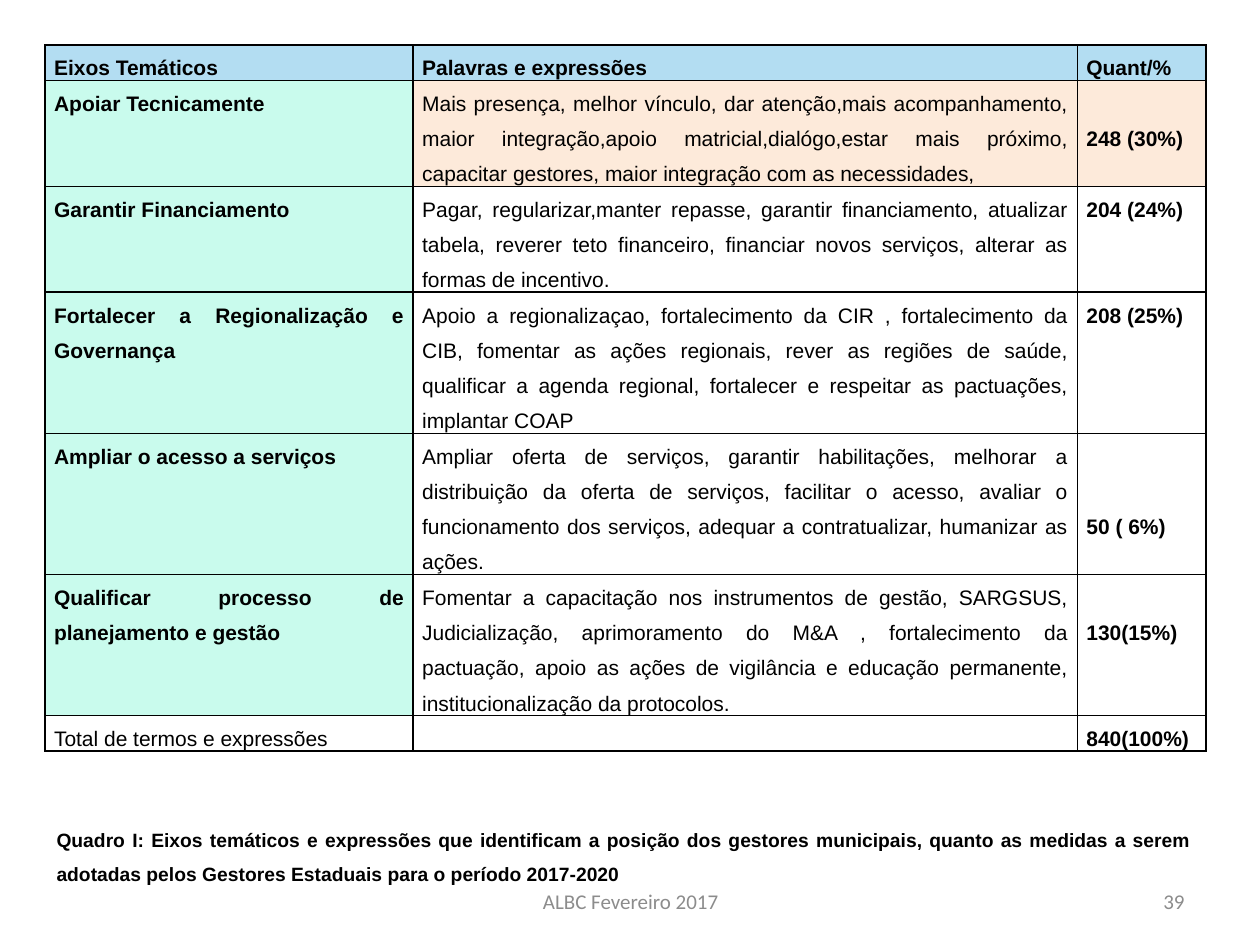
from lxml.etree import SubElement
from pptx import Presentation
from pptx.dml.color import RGBColor as RGB
from pptx.enum.text import MSO_ANCHOR as Anchor, MSO_AUTO_SIZE as Auto, PP_ALIGN as Align
from pptx.oxml import parse_xml
from pptx.oxml.ns import nsdecls
from pptx.util import Cm, Pt

BLACK = RGB(0x00, 0x00, 0x00)
GREY = RGB(0x8C, 0x8C, 0x8C)
BLUE = RGB(0xB3, 0xDD, 0xF2)
MINT = RGB(0xC9, 0xFB, 0xED)
PEACH = RGB(0xFD, 0xEA, 0xDA)

HEAD = ("Eixos Temáticos", "Palavras e expressões", "Quant/%")
# axis, expressions, count, lines in the row, lines above the count
AXES = [
    ("Apoiar Tecnicamente",
     "Mais presença, melhor vínculo, dar atenção,mais acompanhamento, maior "
     "integração,apoio matricial,dialógo,estar mais próximo, capacitar gestores, "
     "maior integração com as necessidades,", "248 (30%)", 3, 1),
    ("Garantir Financiamento",
     "Pagar, regularizar,manter repasse, garantir financiamento, atualizar tabela, "
     "reverer teto financeiro, financiar novos serviços, alterar as formas de "
     "incentivo.", "204 (24%)", 3, 0),
    ("Fortalecer a Regionalização e Governança",
     "Apoio a regionalizaçao, fortalecimento da CIR , fortalecimento da CIB, "
     "fomentar as ações regionais, rever as regiões de saúde, qualificar a agenda "
     "regional, fortalecer e respeitar as pactuações, implantar COAP",
     "208 (25%)", 4, 0),
    ("Ampliar o acesso a serviços",
     "Ampliar oferta de serviços, garantir habilitações, melhorar a distribuição da "
     "oferta de serviços, facilitar o acesso, avaliar o funcionamento dos serviços, "
     "adequar a contratualizar, humanizar as ações.", "50 ( 6%)", 4, 2),
    ("Qualificar processo de planejamento e gestão",
     "Fomentar a capacitação nos instrumentos de gestão, SARGSUS, Judicialização, "
     "aprimoramento do M&A , fortalecimento da pactuação, apoio as ações de "
     "vigilância e educação permanente, institucionalização da protocolos.",
     "130(15%)", 4, 1),
]
TOTAL = ("Total de termos e expressões", "", "840(100%)")
CAPTION = ("Quadro I: Eixos temáticos e expressões que identificam a posição dos "
           "gestores municipais, quanto as medidas a serem adotadas pelos Gestores "
           "Estaduais para o período 2017-2020")
# text, left, width, alignment
FOOT = [("ALBC Fevereiro 2017", 8.69, 8.05, Align.CENTER),
        ("39", 18.21, 5.92, Align.RIGHT)]

COLS = (7.42, 13.39, 2.59)
LINE = 0.71
LEFT = TOP = 0.91


def style(para, size, color, font="Arial", bold=False, align=Align.JUSTIFY):
    para.alignment = align
    for run in para.runs:
        run.font.name, run.font.size, run.font.bold = font, Pt(size), bold
        run.font.color.rgb = color


def border(cell):
    props = cell._tc.get_or_add_tcPr()
    for i, side in enumerate("LRTB"):
        line = parse_xml(f'<a:ln{side} {nsdecls("a")} w="12700"><a:solidFill>'
                         f'<a:srgbClr val="{BLACK}"/></a:solidFill></a:ln{side}>')
        props.insert(i, line)


def put(cell, text, bold, fill, skip):
    """Fill one cell, leaving skip lines free above its text."""
    cell.margin_left = cell.margin_right = Cm(0.18)
    cell.margin_top, cell.margin_bottom = Cm(skip * LINE), 0
    if fill:
        cell.fill.solid()
        cell.fill.fore_color.rgb = fill
    else:
        cell.fill.background()
    border(cell)
    para = cell.text_frame.paragraphs[0]
    if text:
        para.text = text
        para.line_spacing = 1.5
        style(para, 12, BLACK, bold=bold)
    else:
        SubElement(para._p, para._p.tag[:-1] + "endParaRPr", sz="1200")


def add_text(slide, text, left, top, width, height):
    frame = slide.shapes.add_textbox(Cm(left), Cm(top), Cm(width), Cm(height)).text_frame
    frame.word_wrap = True
    frame.text = text
    return frame


def add_grid(slide):
    # texts, bold flags, fills, lines, lines above the count
    rows = [(HEAD, (True,) * 3, (BLUE,) * 3, 1, 0)]
    for i, (*texts, lines, skip) in enumerate(AXES):
        rest = PEACH if i == 0 else None
        rows.append((texts, (True, False, True), (MINT, rest, rest), lines, skip))
    rows.append((TOTAL, (False, False, True), (None,) * 3, 1, 0))

    high = LINE * sum(row[3] for row in rows)
    grid = slide.shapes.add_table(len(rows), len(COLS), Cm(LEFT), Cm(TOP),
                                  Cm(sum(COLS)), Cm(high)).table
    grid.first_row = grid.horz_banding = False
    for col, width in zip(grid.columns, COLS):
        col.width = Cm(width)
    for r, (texts, bolds, fills, lines, skip) in enumerate(rows):
        grid.rows[r].height = Cm(lines * LINE)
        for c, (text, bold, fill) in enumerate(zip(texts, bolds, fills)):
            put(grid.cell(r, c), text, bold, fill, skip if c == 2 else 0)


def main():
    deck = Presentation()
    deck.slide_width, deck.slide_height = Cm(25.4), Cm(19.05)
    slide = deck.slides.add_slide(deck.slide_layouts[6])
    add_grid(slide)

    frame = add_text(slide, CAPTION, 0.89, 16.33, 23.39, 1.6)
    frame.auto_size = Auto.SHAPE_TO_FIT_TEXT
    para = frame.paragraphs[0]
    para.line_spacing, para.space_after = 1.5, Pt(8)
    style(para, 11, BLACK, bold=True)

    for text, left, width, align in FOOT:
        frame = add_text(slide, text, left, 17.65, width, 1.02)
        frame.vertical_anchor = Anchor.MIDDLE
        style(frame.paragraphs[0], 12, GREY, "Calibri", align=align)
    deck.save("out.pptx")


if __name__ == "__main__":
    main()
